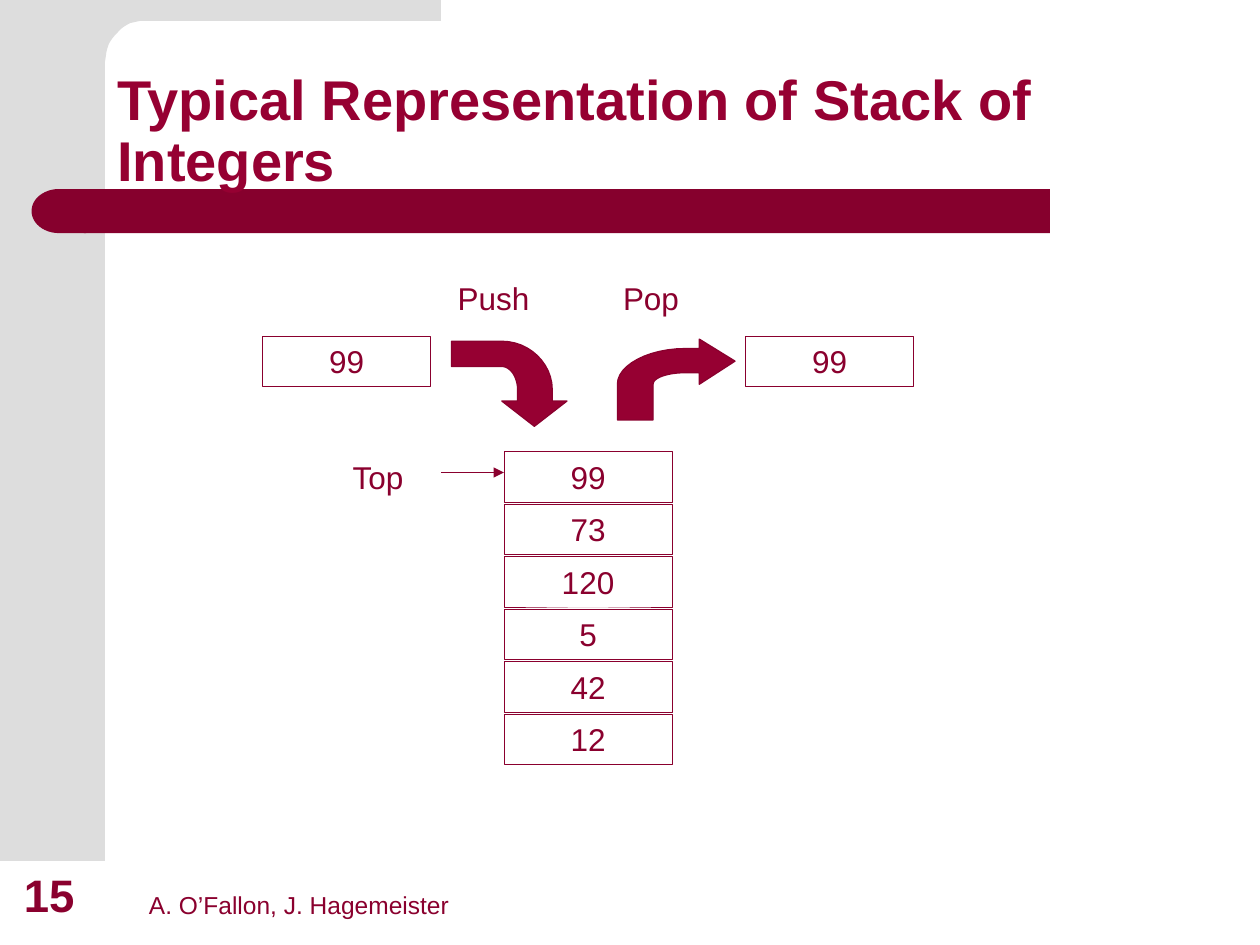
from dataclasses import dataclass

from lxml import etree
from pptx import Presentation
from pptx.dml.color import RGBColor
from pptx.enum.shapes import MSO_CONNECTOR, MSO_SHAPE
from pptx.enum.text import MSO_ANCHOR, PP_ALIGN
from pptx.oxml.ns import qn
from pptx.util import Pt

PX = 7620  # EMU in one px, at 120 px to the inch
RECTANGLE, DELAY = MSO_SHAPE.RECTANGLE, MSO_SHAPE.FLOWCHART_DELAY
STRAIGHT = MSO_CONNECTOR.STRAIGHT
TOP, BOTTOM = MSO_ANCHOR.TOP, MSO_ANCHOR.BOTTOM
LEFT, CENTER = PP_ALIGN.LEFT, PP_ALIGN.CENTER

GREY, BAR, INK, ACCENT = "DDDDDD", "86002D", "8A002E", "960032"
CURVE_STEPS = 12
CELL_WIDTH, CELL_HEIGHT, CELL_STEP = 160, 48, 50
STACK_LEFT, STACK_TOP = 480, 430
STACK_VALUES = ["99", "73", "120", "5", "42", "12"]


@dataclass
class Label:
    text: str
    left: int
    top: int
    width: int
    height: int = CELL_HEIGHT
    size: int = 18
    bold: bool = False
    color: str = INK
    align: PP_ALIGN = CENTER
    anchor: MSO_ANCHOR = TOP
    line_spacing: float = 1.0
    framed: bool = False


@dataclass
class Outline:
    """Path steps: two numbers make a line, six a cubic curve."""
    start: tuple[int, int]
    steps: list[tuple[int, ...]]
    fill: str
    line: str | None = None


CORNER = Outline((420, 0), [
    (420, 20), (139, 20), (133, 20), (124, 22),
    (120, 24, 115, 27, 112, 31), (108, 35, 104, 40, 103, 44),
    (101, 49, 101, 54, 100, 59), (100, 73), (60, 73), (60, 0),
], GREY)
PUSH_ARROW = Outline((509, 406), [
    (540, 382), (526, 382), (526, 371), (526, 346, 504, 325, 478, 325),
    (430, 325), (430, 349), (478, 349), (486, 349, 493, 359, 493, 371),
    (493, 382), (478, 382),
], ACCENT, INK)
POP_ARROW = Outline((700, 344), [
    (666, 323), (666, 332), (653, 332), (617, 332, 588, 348, 588, 366),
    (588, 400), (622, 400), (622, 366), (622, 360, 635, 355, 653, 355),
    (666, 355), (666, 366),
], ACCENT, INK)

FOOTERS = [
    Label("A. O’Fallon, J. Hagemeister", 130, 820, 450, 62, size=14,
          align=LEFT, anchor=BOTTOM),
    Label("15", 11, 820, 77, 64, size=26, bold=True, align=LEFT, anchor=BOTTOM),
]
TITLE = Label("Typical Representation of Stack of Integers", 100, 40, 1040, 150,
              size=32, bold=True, color=ACCENT, align=LEFT, anchor=BOTTOM,
              line_spacing=0.9)
CELLS = [
    Label(value, STACK_LEFT, STACK_TOP + row * CELL_STEP, CELL_WIDTH, framed=True)
    for row, value in enumerate(STACK_VALUES)
] + [Label("99", left, 320, CELL_WIDTH, framed=True) for left in (250, 710)]
CAPTIONS = [
    Label("Push", 420, 260, 100),
    Label("Pop", 570, 260, 100),
    Label("Top", 310, STACK_TOP, 100),
]


def rgb(color: str) -> RGBColor:
    return RGBColor.from_string(color)


def paint(shape, fill: str | None, line: str | None = None, width: float = 0.75) -> None:
    shape.shadow.inherit = False
    if fill:
        shape.fill.solid()
        shape.fill.fore_color.rgb = rgb(fill)
    else:
        shape.fill.background()
    if line:
        shape.line.color.rgb = rgb(line)
        shape.line.width = Pt(width)
    else:
        shape.line.fill.background()


def add_block(page, kind: MSO_SHAPE, bounds: tuple[int, ...], fill: str):
    block = page.shapes.add_shape(kind, *(value * PX for value in bounds))
    paint(block, fill)
    return block


def curve_points(start: tuple[int, ...], curve: tuple[int, ...]) -> list[tuple[float, float]]:
    corners = [start, curve[0:2], curve[2:4], curve[4:6]]
    points = []
    for step in range(1, CURVE_STEPS + 1):
        t = step / CURVE_STEPS
        weights = ((1 - t) ** 3, 3 * t * (1 - t) ** 2, 3 * t * t * (1 - t), t ** 3)
        points.append(tuple(
            sum(weight * corner[axis] for weight, corner in zip(weights, corners))
            for axis in (0, 1)))
    return points


def add_outline(page, outline: Outline) -> None:
    points, current = [], outline.start
    for step in outline.steps:
        points += [step] if len(step) == 2 else curve_points(current, step)
        current = step[-2:]
    # One EMU per unit keeps the sampled curves smooth
    to_emu = [(round(x * PX), round(y * PX)) for x, y in [outline.start, *points]]
    builder = page.shapes.build_freeform(*to_emu[0], scale=1.0)
    builder.add_line_segments(to_emu[1:], close=True)
    paint(builder.convert_to_shape(), outline.fill, outline.line)


def add_label(page, label: Label) -> None:
    bounds = [value * PX for value in (label.left, label.top, label.width, label.height)]
    if label.framed:
        box = page.shapes.add_shape(RECTANGLE, *bounds)
        paint(box, None, INK, 0.25)
    else:
        box = page.shapes.add_textbox(*bounds)
    frame = box.text_frame
    frame.word_wrap = True
    frame.vertical_anchor = label.anchor
    para = frame.paragraphs[0]
    para.alignment = label.align
    para.line_spacing = label.line_spacing
    span = para.add_run()
    span.text = label.text
    formats = {"name": "Arial", "size": Pt(label.size), "bold": label.bold}
    for name, value in formats.items():
        setattr(span.font, name, value)
    span.font.color.rgb = rgb(label.color)


def add_pointer(page, left: int, right: int, y: int) -> None:
    pointer = page.shapes.add_connector(STRAIGHT, left * PX, y * PX, right * PX, y * PX)
    pointer.line.color.rgb = rgb(INK)
    pointer.line.width = Pt(0.75)
    etree.SubElement(pointer.line._get_or_add_ln(), qn("a:tailEnd"), type="triangle")
    etree.SubElement(pointer._element.spPr, qn("a:effectLst"))


def main() -> None:
    deck = Presentation()
    deck.slide_width, deck.slide_height = 1200 * PX, 900 * PX
    page = deck.slides.add_slide(deck.slide_layouts[6])

    add_block(page, RECTANGLE, (0, 0, 100, 820), GREY)
    add_outline(page, CORNER)
    add_block(page, RECTANGLE, (80, 180, 920, 42), BAR)
    bar_end = add_block(page, DELAY, (30, 180, 52, 42), BAR)
    bar_end.rotation = 180

    for label in [*FOOTERS, TITLE, *CELLS]:
        add_label(page, label)
    for arrow in (PUSH_ARROW, POP_ARROW):
        add_outline(page, arrow)
    for caption in CAPTIONS:
        add_label(page, caption)
    add_pointer(page, 420, STACK_LEFT, 450)

    deck.save("out.pptx")


if __name__ == "__main__":
    main()
